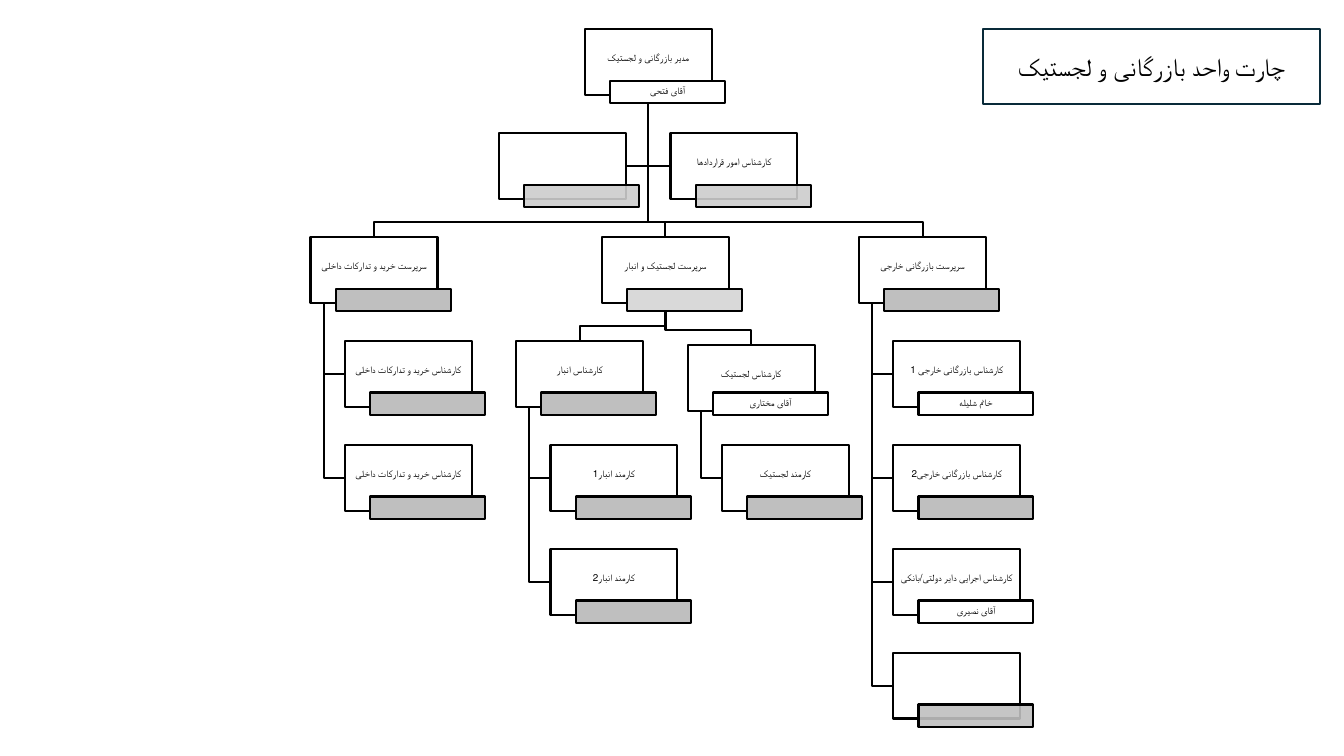
import math
from dataclasses import dataclass

import pptx
import pptx.dml.color
import pptx.enum.shapes
import pptx.enum.text
import pptx.oxml
import pptx.oxml.ns
import pptx.util


@dataclass(frozen=True)
class Theme:
    ink: str = "000000"
    paper: str = "FFFFFF"
    title_line: str = "092A39"
    vacant: str = "BFBFBF"
    vacant_light: str = "D9D9D9"
    vacant_aside: str = "CCCCCC"
    title_font: str = "Cabin"
    post_font: str = "Karla"
    title_size: float = 18
    post_size: float = 7
    line_width: float = 1.5


@dataclass(frozen=True)
class Box:
    left: float
    top: float
    width: float
    height: float

    @property
    def middle(self):
        return self.left + self.width / 2

    @property
    def centre(self):
        return self.top + self.height / 2

    @property
    def right(self):
        return self.left + self.width

    @property
    def bottom(self):
        return self.top + self.height


@dataclass(frozen=True)
class Post:
    """One position: parent's key, link kind, grid cell, job title and holder."""
    parent: str
    link: str
    column: int
    row: float
    job: str = ""
    holder: str = ""
    plate: str = "FFFFFF"
    opacity: int = 100


THEME = Theme()
SLIDE = Box(0, 0, 13.33, 7.5)
TITLE_BOX = Box(9.75, 0.29, 3.34, 0.74)
CHART_BOX = Box(0.02, 0.29, 10.2, 7.22)
COLUMNS, ROWS = 60, 7
CARD_WIDTH, CARD_HEIGHT = 1.26, 0.65
PLATE_RIGHT, PLATE_DOWN, PLATE_WIDTH, PLATE_HEIGHT = 0.25, 0.51, 1.14, 0.22
TRUNK_INDENT, BAR_RISE = 0.13, 0.15
CARD_INSETS = (0.01, 0.01, 0.01, 0.08)
PLATE_INSETS = (0.02, 0, 0.02, 0)
TITLE_INSETS = (0.1, 0.05, 0.1, 0.05)

VACANT = THEME.vacant
POSTS = {
    "manager": Post("", "", 34, 0, "مدیر بازرگانی و لجستیک", "آقای فتحی"),
    "purchasing": Post("manager", "branch", 18, 2, "سرپرست خرید و تدارکات داخلی", plate=VACANT),
    "buyer 1": Post("purchasing", "list", 20, 3, "کارشناس خرید و تدارکات داخلی", plate=VACANT),
    "buyer 2": Post("purchasing", "list", 20, 4, "کارشناس خرید و تدارکات داخلی", plate=VACANT),
    "logistics": Post("manager", "branch", 35, 2, "سرپرست لجستیک و انبار",
                      plate=THEME.vacant_light),
    "warehouse": Post("logistics", "branch", 30, 3, "کارشناس انبار", plate=VACANT),
    "storekeeper 1": Post("warehouse", "list", 32, 4, "کارمند انبار1", plate=VACANT),
    "storekeeper 2": Post("warehouse", "list", 32, 5, "کارمند انبار2", plate=VACANT),
    "transport": Post("logistics", "branch", 40, 3.04, "کارشناس لجستیک", "آقای مختاری"),
    "transport clerk": Post("transport", "list", 42, 4, "کارمند لجستیک", plate=VACANT),
    "foreign trade": Post("manager", "branch", 50, 2, "سرپرست بازرگانی خارجی", plate=VACANT),
    "trade expert 1": Post("foreign trade", "list", 52, 3, "کارشناس بازرگانی خارجی 1",
                           "خانم شلیله"),
    "trade expert 2": Post("foreign trade", "list", 52, 4, "كارشناس بازرگانی خارجی2",
                           plate=VACANT),
    "executive": Post("foreign trade", "list", 52, 5, "کارشناس اجرایی دایر دولتی/بانکی",
                      "آقای نصیری"),
    "trade vacancy": Post("foreign trade", "list", 52, 6, plate=VACANT, opacity=90),
    "manager vacancy": Post("manager", "aside", 29, 1, plate=THEME.vacant_aside, opacity=90),
    "contracts": Post("manager", "aside", 39, 1, "کارشناس امور قراردادها",
                      plate=THEME.vacant_aside, opacity=90),
}


def rgb(value):
    return pptx.dml.color.RGBColor.from_string(value)


def set_line(shape, color):
    shape.shadow.inherit = False
    shape.line.color.rgb = rgb(color)
    shape.line.width = pptx.util.Pt(THEME.line_width)


def write(shape, text, font, size, insets, spacing):
    frame = shape.text_frame
    sides = ("margin_left", "margin_top", "margin_right", "margin_bottom")
    frame_format = dict(zip(sides, map(pptx.util.Inches, insets)))
    frame_format.update(word_wrap=True, vertical_anchor=pptx.enum.text.MSO_ANCHOR.MIDDLE)
    for attribute, value in frame_format.items():
        setattr(frame, attribute, value)
    paragraph = frame.paragraphs[0]
    paragraph.alignment = pptx.enum.text.PP_ALIGN.CENTER
    paragraph.line_spacing = spacing
    paragraph._p.get_or_add_pPr().set("rtl", "1")
    run = paragraph.add_run()
    run.text = text
    for attribute, value in {"name": font, "size": pptx.util.Pt(size)}.items():
        setattr(run.font, attribute, value)
    run.font.color.rgb = rgb(THEME.ink)


def add_rectangle(slide, box, fill, line, opacity=100):
    lengths = map(pptx.util.Inches, (box.left, box.top, box.width, box.height))
    rectangle = slide.shapes.add_shape(pptx.enum.shapes.MSO_SHAPE.RECTANGLE, *lengths)
    rectangle.fill.solid()
    rectangle.fill.fore_color.rgb = rgb(fill)
    set_line(rectangle, line)
    if opacity < 100:
        color = rectangle._element.spPr.find(".//" + pptx.oxml.ns.qn("a:srgbClr"))
        color.append(pptx.oxml.parse_xml(
            f'<a:alpha {pptx.oxml.ns.nsdecls("a")} val="{opacity * 1000}"/>'))
    return rectangle


def card_box(post, chart):
    return Box(chart.left + post.column * chart.width / COLUMNS,
               chart.top + post.row * chart.height / ROWS, CARD_WIDTH, CARD_HEIGHT)


def link_points(kind, parent, child):
    if kind == "branch":
        bar = child.top - BAR_RISE
        return [(parent.middle, parent.bottom), (parent.middle, bar),
                (child.middle, bar), (child.middle, child.top)]
    trunk = parent.middle if kind == "aside" else parent.left + TRUNK_INDENT
    near_side = child.left if child.left > trunk else child.right
    return [(trunk, parent.bottom), (trunk, child.centre), (near_side, child.centre)]


def draw_link(slide, points):
    start, *rest = [tuple(map(pptx.util.Inches, point)) for point in points]
    builder = slide.shapes.build_freeform(*start)
    builder.add_line_segments(rest, close=False)
    link = builder.convert_to_shape()
    link.fill.background()
    set_line(link, THEME.ink)


def draw_post(slide, post, chart):
    """Card with the job title, overlapped by the holder's name plate."""
    card = card_box(post, chart)
    row_top = chart.top + math.floor(post.row) * chart.height / ROWS
    plate = Box(card.left + PLATE_RIGHT, row_top + PLATE_DOWN, PLATE_WIDTH, PLATE_HEIGHT)
    parts = ((card, THEME.paper, 100, post.job, CARD_INSETS),
             (plate, post.plate, post.opacity, post.holder, PLATE_INSETS))
    for box, fill, opacity, text, insets in parts:
        rectangle = add_rectangle(slide, box, fill, THEME.ink, opacity)
        if text:
            write(rectangle, text, THEME.post_font, THEME.post_size, insets, 0.9)


def draw_chart(slide, chart):
    for post in POSTS.values():
        if post.parent:
            parent = card_box(POSTS[post.parent], chart)
            draw_link(slide, link_points(post.link, parent, card_box(post, chart)))
    for post in POSTS.values():
        draw_post(slide, post, chart)


def draw_title(slide, box):
    title = add_rectangle(slide, box, THEME.paper, THEME.title_line)
    write(title, "چارت واحد بازرگانی و لجستیک", THEME.title_font, THEME.title_size,
          TITLE_INSETS, 1.0)


def main():
    deck = pptx.Presentation()
    deck.slide_width = pptx.util.Inches(SLIDE.width)
    deck.slide_height = pptx.util.Inches(SLIDE.height)
    slide = deck.slides.add_slide(deck.slide_layouts[6])
    draw_chart(slide, CHART_BOX)
    draw_title(slide, TITLE_BOX)
    deck.save("out.pptx")


if __name__ == "__main__":
    main()
